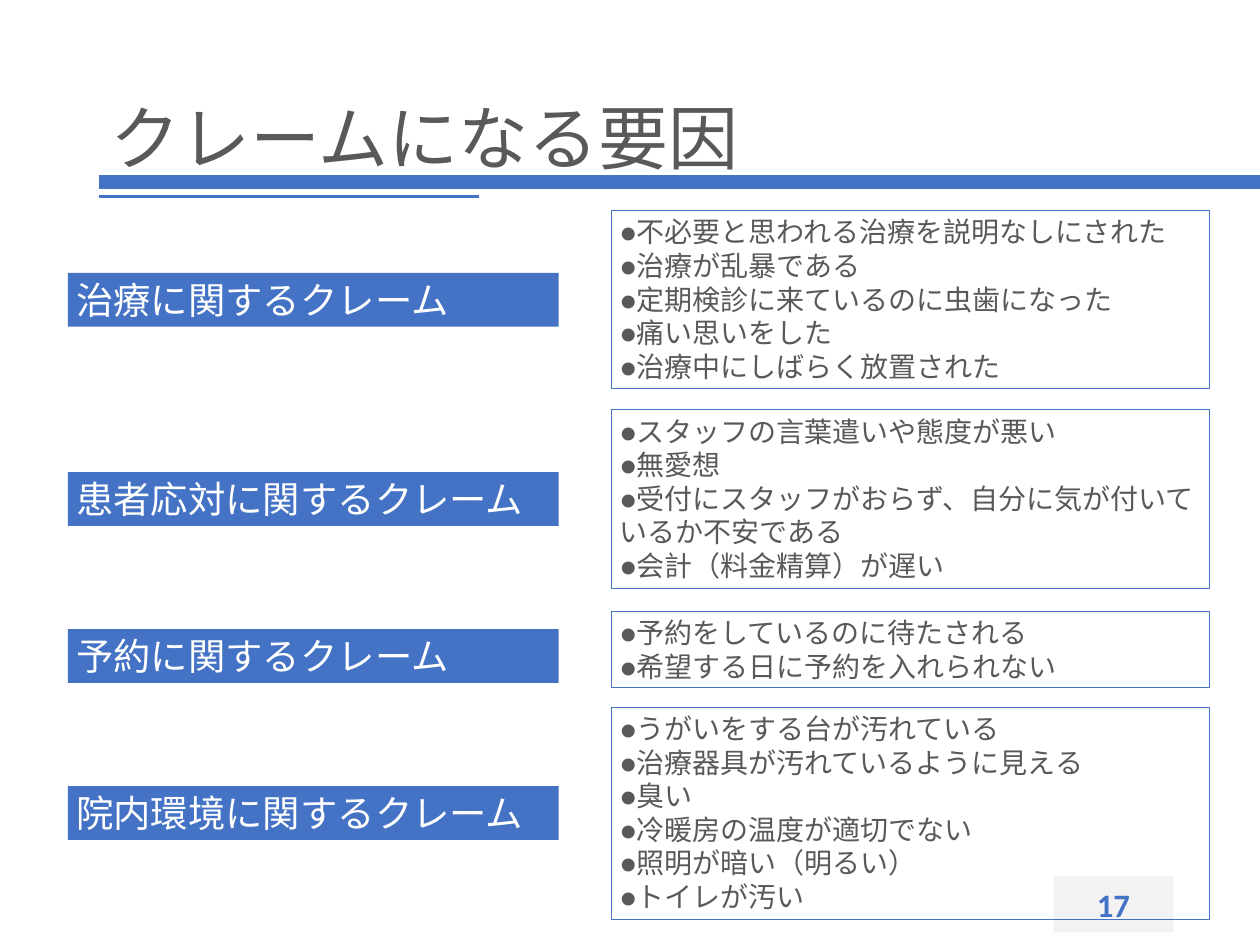
from lxml import etree
from pptx import Presentation
from pptx.dml.color import RGBColor
from pptx.enum.shapes import MSO_CONNECTOR, MSO_SHAPE
from pptx.enum.text import MSO_ANCHOR, MSO_AUTO_SIZE, PP_ALIGN
from pptx.oxml.ns import qn
from pptx.util import Inches, Pt

BLUE = RGBColor(0x44, 0x72, 0xC4)
GRAY = RGBColor(0x59, 0x59, 0x59)
LIGHT_GRAY = RGBColor(0xF2, 0xF2, 0xF2)
WHITE = RGBColor(0xFF, 0xFF, 0xFF)
TEXT_FONT = "Calibri"
TITLE_FONT = "Noto Sans CJK JP"

LABEL_LEFT, LABEL_WIDTH, LABEL_HEIGHT = 0.81, 5.84, 0.64
LIST_LEFT, LIST_WIDTH = 7.28, 7.12

# Label, label top, list top, list height, complaints
CATEGORIES = [
    ("治療に関するクレーム", 3.25, 2.51, 2.12, [
        "不必要と思われる治療を説明なしにされた",
        "治療が乱暴である",
        "定期検診に来ているのに虫歯になった",
        "痛い思いをした",
        "治療中にしばらく放置された"]),
    ("患者応対に関するクレーム", 5.62, 4.88, 2.12, [
        "スタッフの言葉遣いや態度が悪い",
        "無愛想",
        "受付にスタッフがおらず、自分に気が付いているか不安である",
        "会計（料金精算）が遅い"]),
    ("予約に関するクレーム", 7.49, 7.28, 0.91, [
        "予約をしているのに待たされる",
        "希望する日に予約を入れられない"]),
    ("院内環境に関するクレーム", 9.36, 8.42, 2.52, [
        "うがいをする台が汚れている",
        "治療器具が汚れているように見える",
        "臭い",
        "冷暖房の温度が適切でない",
        "照明が暗い（明るい）",
        "トイレが汚い"]),
]


def write_lines(shape, lines, size, color, font=TEXT_FONT, align=PP_ALIGN.LEFT,
                anchor=MSO_ANCHOR.TOP, bold=False):
    frame = shape.text_frame
    frame.word_wrap = True
    frame.auto_size = MSO_AUTO_SIZE.NONE
    frame.vertical_anchor = anchor
    frame.text = "\n".join(lines)
    for paragraph in frame.paragraphs:
        paragraph.alignment = align
        paragraph.font.size = Pt(size)
        paragraph.font.bold = bold
        paragraph.font.color.rgb = color
        paragraph.font.name = font
        # Japanese glyphs use the East Asian font slot
        for run in paragraph.runs:
            properties = run._r.get_or_add_rPr()
            run.font.name = font
            etree.SubElement(properties, qn("a:ea")).set("typeface", font)


def add_box(slide, left, top, width, height, fill=None, line=None, line_width=0.75):
    shape = slide.shapes.add_shape(MSO_SHAPE.RECTANGLE, Inches(left), Inches(top),
                                   Inches(width), Inches(height))
    shape.shadow.inherit = False
    if fill is None:
        shape.fill.background()
    else:
        shape.fill.solid()
        shape.fill.fore_color.rgb = fill
    if line is None:
        shape.line.fill.background()
    else:
        shape.line.color.rgb = line
        shape.line.width = Pt(line_width)
    return shape


def add_heading(slide, left, top, width, height):
    # Thick rule with a short thin one below
    add_box(slide, 1.18, 2.09, 13.82, 0.15, BLUE, BLUE, 1)
    rule = slide.shapes.add_connector(MSO_CONNECTOR.STRAIGHT, Inches(1.18), Inches(2.34),
                                      Inches(5.7), Inches(2.34))
    rule.line.color.rgb = BLUE
    rule.line.width = Pt(2.25)
    etree.SubElement(rule._element.spPr, qn("a:effectLst"))

    title = slide.shapes.title
    title.left, title.top = Inches(left), Inches(top)
    title.width, title.height = Inches(width), Inches(height)
    write_lines(title, [" クレームになる要因"], 60, GRAY, TITLE_FONT, anchor=MSO_ANCHOR.MIDDLE)
    paragraph = title.text_frame.paragraphs[0]
    paragraph.line_spacing = 0.9
    paragraph.space_before = Pt(0)
    paragraph.space_after = Pt(6)


def add_page_number(slide, left, top, width, height):
    box = add_box(slide, left, top, width, height, LIGHT_GRAY)
    write_lines(box, ["17"], 28, BLUE, align=PP_ALIGN.CENTER,
                anchor=MSO_ANCHOR.MIDDLE, bold=True)


def add_category(slide, label, label_top, list_top, list_height, complaints):
    label_box = add_box(slide, LABEL_LEFT, label_top, LABEL_WIDTH, LABEL_HEIGHT, BLUE)
    write_lines(label_box, [label], 32, WHITE)
    list_box = add_box(slide, LIST_LEFT, list_top, LIST_WIDTH, list_height, line=BLUE)
    write_lines(list_box, ["●" + complaint for complaint in complaints], 24, GRAY)


def main():
    presentation = Presentation()
    presentation.slide_width = Inches(15)
    presentation.slide_height = Inches(11.25)
    slide = presentation.slides.add_slide(presentation.slide_layouts[5])

    add_heading(slide, 1.03, 0.6, 12.94, 2.17)
    add_page_number(slide, 12.54, 10.43, 1.43, 0.67)
    for category in CATEGORIES:
        add_category(slide, *category)

    presentation.save("out.pptx")


if __name__ == "__main__":
    main()
